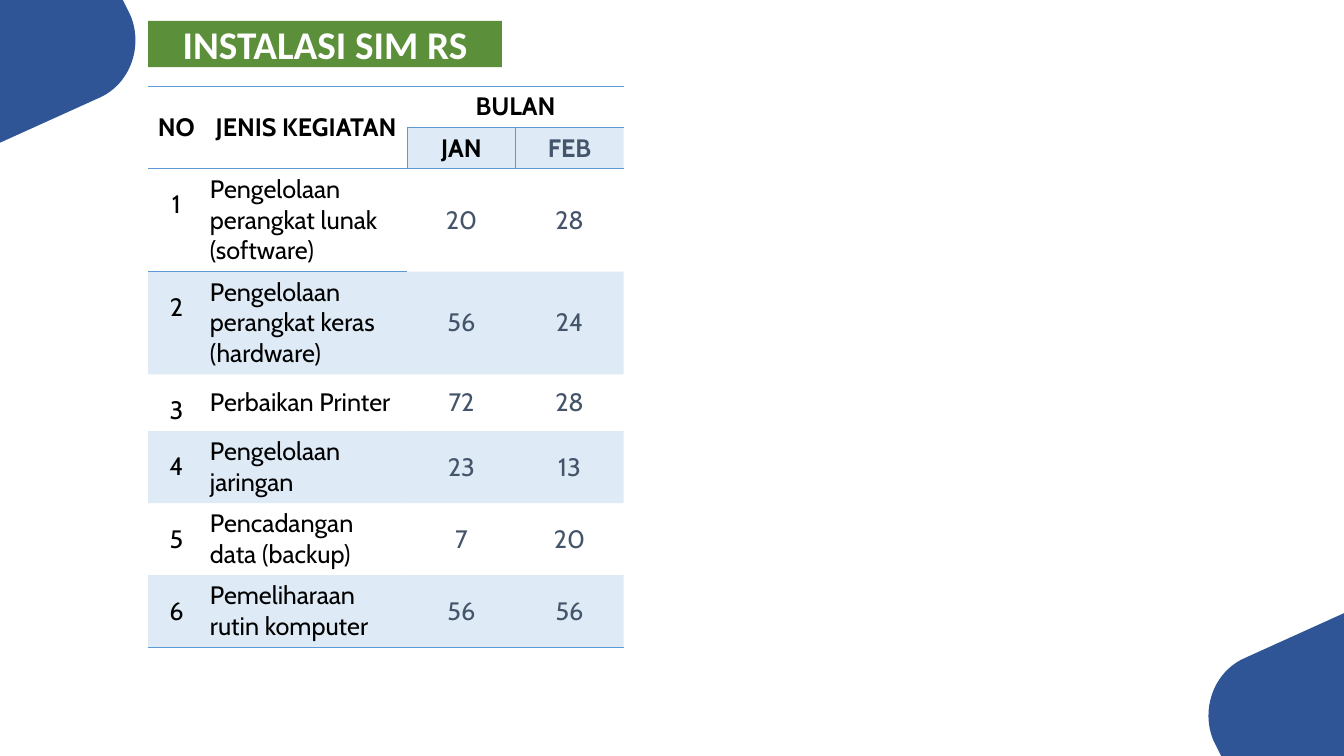
from lxml import etree
from pptx import Presentation
from pptx import util as u
from pptx.dml import color
from pptx.enum import text
from pptx.oxml import ns

PX = 9525
WIDTH, HEIGHT = 1280, 720
COLORS = {"navy": "2F5597", "green": "5C8F3A", "sky": "5B9BD5",
          "slate": "44546A", "black": "000000", "white": "FFFFFF"}
PLAIN_STYLE = "{2D5ABB26-0587-4C30-8999-92F81FD0307C}"
COLUMN_WIDTHS = [54, 193, 103, 103]
ROW_HEIGHTS = [39, 39, 98, 98, 53, 68, 68, 68]
HEADINGS = [["NO", "JENIS KEGIATAN", "BULAN", ""], ["", "", "JAN", "FEB"]]
ACTIVITIES = [
    ("Pengelolaan perangkat lunak (software)", 20, 28),
    ("Pengelolaan perangkat keras (hardware)", 56, 24),
    ("Perbaikan Printer", 72, 28),
    ("Pengelolaan jaringan", 23, 13),
    ("Pencadangan data (backup)", 7, 20),
    ("Pemeliharaan rutin komputer", 56, 56),
]


def px(*lengths):
    """Turn px lengths into EMU."""
    return [u.Emu(length * PX) for length in lengths]


def rgb(name):
    """Return the named colour."""
    return color.RGBColor.from_string(COLORS[name])


def apply(target, formats):
    """Set each attribute in the dict of format values."""
    for name, value in formats.items():
        setattr(target, name, value)


def write(frame, words, tone, font, size, bold, align, spacing=1.0):
    """Write one formatted paragraph into a text frame."""
    frame.text = words
    line = frame.paragraphs[0]
    apply(line, {"alignment": align, "line_spacing": spacing})
    run_font = line.runs[0].font
    apply(run_font, {"name": font, "size": u.Pt(size), "bold": bold})
    run_font.color.rgb = rgb(tone)


def add_corner(slide, x, y, direction):
    """Draw a rounded corner growing from a slide corner in a direction."""
    bend = [(124, 14), (137, 44), (124, 80), (95, 93)]
    steps = 24
    curve = []
    for step in range(steps + 1):
        t = step / steps
        weights = [(1 - t) ** 3, 3 * t * (1 - t) ** 2, 3 * t * t * (1 - t), t ** 3]
        curve.append([sum(w * p[axis] for w, p in zip(weights, bend)) for axis in (0, 1)])
    outline = [(117, 0), *curve, (0, 136)]
    builder = slide.shapes.build_freeform(x * PX, y * PX, scale=1.0)
    builder.add_line_segments(
        [(round((x + direction * dx) * PX), round((y + direction * dy) * PX))
         for dx, dy in outline], close=True)
    corner = builder.convert_to_shape()
    corner.shadow.inherit = False
    corner.fill.solid()
    corner.fill.fore_color.rgb = rgb("navy")
    corner.line.fill.background()


def add_heading(slide, left, top, width, height):
    """Turn the title placeholder into a rounded green label."""
    heading = slide.shapes.title
    apply(heading, dict(zip(("left", "top", "width", "height"),
                            px(left, top, width, height))))
    geometry = etree.SubElement(heading._element.spPr, ns.qn("a:prstGeom"), prst="roundRect")
    etree.SubElement(geometry, ns.qn("a:avLst"))
    heading.fill.solid()
    heading.fill.fore_color.rgb = rgb("green")
    apply(heading.text_frame, {"word_wrap": True,
                               "auto_size": text.MSO_AUTO_SIZE.NONE,
                               "vertical_anchor": text.MSO_ANCHOR.MIDDLE})
    write(heading.text_frame, "INSTALASI SIM RS", "white", "Calibri", 28, True,
          text.PP_ALIGN.CENTER)


def border_sides(row, column):
    """Name the sides of a cell that carry a rule."""
    if row == 0 or (row == 1 and column < 2):
        return "TB" if row == 0 else "B"
    if row == 1:
        return "LT" if column == 2 else "T"
    if row == 2 and column < 2:
        return "T"
    return "B" if row == len(ROW_HEIGHTS) - 1 else ""


def style_cell(cell, row, column):
    """Set the margins, rules and band of one cell."""
    margin = px(5)[0]
    apply(cell, dict.fromkeys(
        ("margin_left", "margin_right", "margin_top", "margin_bottom"), margin))
    numbering = row > 1 and column == 0
    cell.vertical_anchor = text.MSO_ANCHOR.TOP if numbering else text.MSO_ANCHOR.MIDDLE
    properties = cell._tc.get_or_add_tcPr()
    for side in border_sides(row, column):
        rule = etree.SubElement(properties, ns.qn(f"a:ln{side}"), w=str(u.Pt(1)))
        paint = etree.SubElement(rule, ns.qn("a:solidFill"))
        etree.SubElement(paint, ns.qn("a:srgbClr"), val=COLORS["sky"])
    if row % 2 and (row > 1 or column > 1):
        cell.fill.solid()
        cell.fill.fore_color.rgb = rgb("sky")
        tint = properties.find(ns.qn("a:solidFill"))[0]
        etree.SubElement(tint, ns.qn("a:alpha"), val="20000")
    else:
        cell.fill.background()


def add_activities(slide, left, top):
    """Build the table of activities by month."""
    rows = HEADINGS + [[number, *entry] for number, entry in enumerate(ACTIVITIES, 1)]
    frame = slide.shapes.add_table(
        len(rows), len(COLUMN_WIDTHS),
        *px(left, top, sum(COLUMN_WIDTHS), sum(ROW_HEIGHTS)))
    grid = frame.table
    apply(grid, {"first_row": False, "horz_banding": False})
    grid._tbl.tblPr.find(ns.qn("a:tableStyleId")).text = PLAIN_STYLE
    for column, width in zip(grid.columns, px(*COLUMN_WIDTHS)):
        column.width = width
    for row, height in zip(grid.rows, px(*ROW_HEIGHTS)):
        row.height = height
    for start, end in [((0, 0), (1, 0)), ((0, 1), (1, 1)), ((0, 2), (0, 3))]:
        grid.cell(*start).merge(grid.cell(*end))
    for r, entries in enumerate(rows):
        for c, entry in enumerate(entries):
            cell = grid.cell(r, c)
            style_cell(cell, r, c)
            if entry == "":
                continue
            header = r < 2
            tone = "slate" if c == 3 or (c == 2 and not header) else "black"
            align = text.PP_ALIGN.LEFT if c == 1 and not header else text.PP_ALIGN.CENTER
            spacing = 1.5 if c == 0 and not header else 1.0
            write(cell.text_frame, str(entry), tone, "Cabin", 18, header, align, spacing)


def main():
    """Build and save the slide."""
    deck = Presentation()
    apply(deck, dict(zip(("slide_width", "slide_height"), px(WIDTH, HEIGHT))))
    slide = deck.slides.add_slide(deck.slide_layouts[5])
    add_corner(slide, WIDTH, HEIGHT, -1)
    add_corner(slide, 0, 0, 1)
    add_heading(slide, 141, 20, 337, 44)
    add_activities(slide, 141, 82)
    deck.save("out.pptx")


if __name__ == "__main__":
    main()
